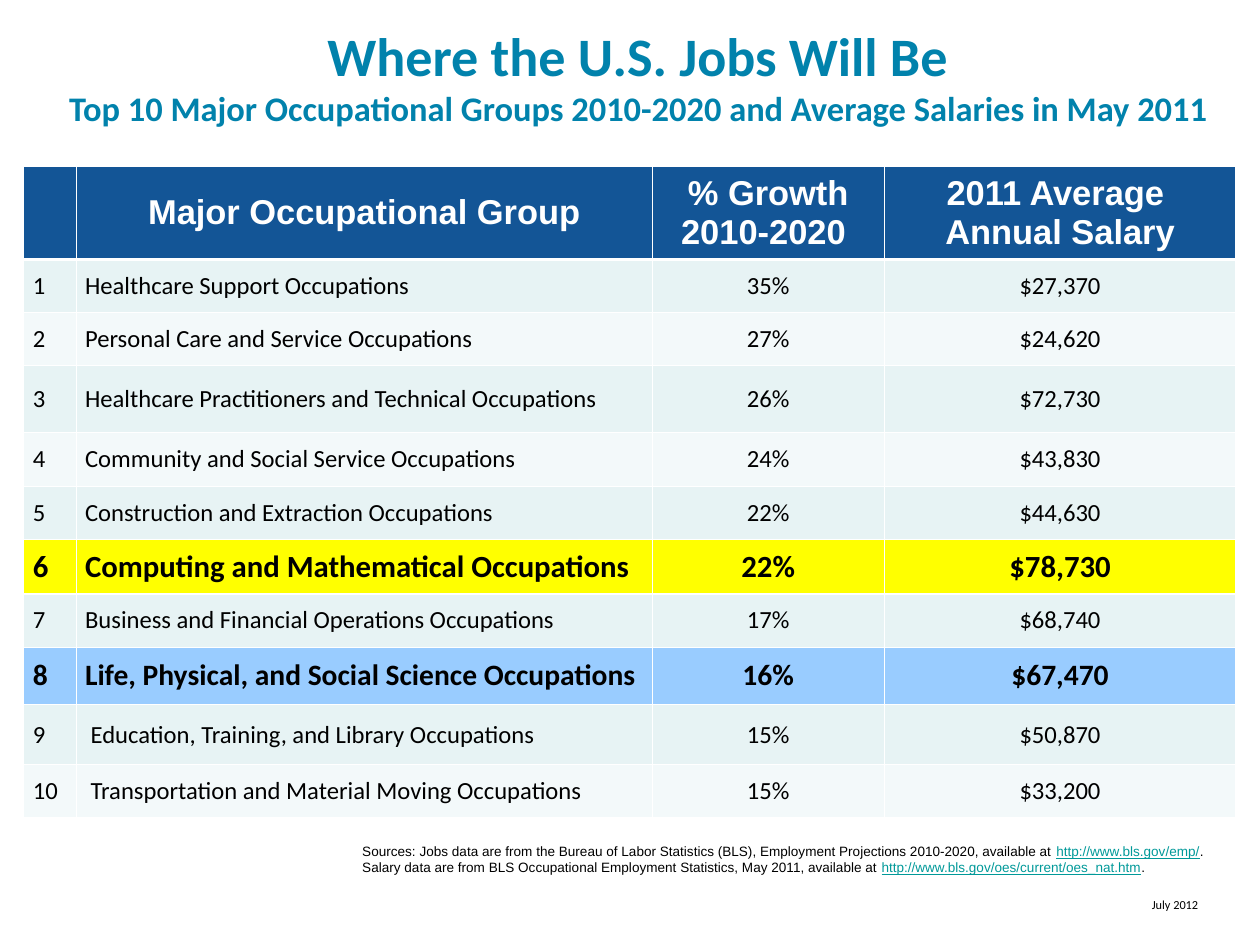
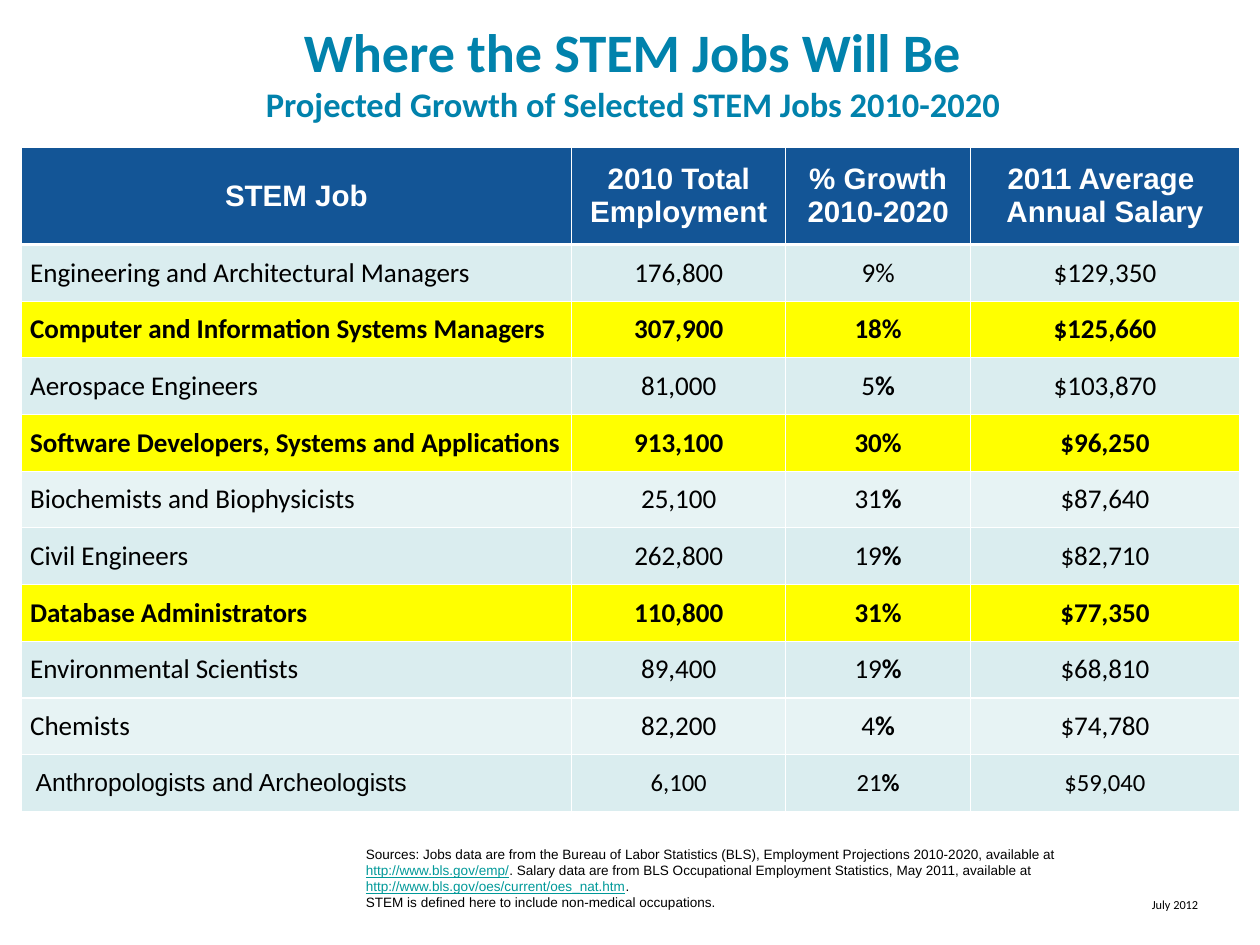
"""Build two slides of job growth and salary tables."""
from lxml import etree
from pptx import Presentation
from pptx import util as u
from pptx.dml.color import RGBColor
from pptx.enum import text
from pptx.oxml.ns import qn

COLORS = {
    "title": "0182AC", "header": "135596", "white": "FFFFFF", "black": "000000",
    "link": "009999", "pale": "F3F9FA", "light": "E7F3F4", "medium": "DAEDEF",
    "yellow": "FFFF00", "blue": "99CCFF",
}
CENTER, LEFT, RIGHT = text.PP_ALIGN.CENTER, text.PP_ALIGN.LEFT, text.PP_ALIGN.RIGHT
MIDDLE = text.MSO_ANCHOR.MIDDLE

TITLE = {"name": "Calibri", "size": u.Pt(44), "bold": True, "color": "title"}
SUBTITLE = {**TITLE, "size": u.Pt(28)}
DATE = {"name": "Calibri", "size": u.Pt(10), "color": "black"}
SOURCE = {"name": "Arial", "size": u.Pt(11), "color": "black"}
LINK = {**SOURCE, "color": "link", "underline": True}
HEADER = {"name": "Arial", "bold": True, "color": "white"}
BODY = {"name": "Calibri", "bold": False, "color": "black"}

SOURCES = [
    ("Sources: Jobs data are from the Bureau of Labor Statistics (BLS), "
     "Employment Projections 2010-2020, available at ", SOURCE),
    ("http://www.bls.gov/emp/", LINK),
    (". Salary data are from BLS Occupational Employment Statistics, "
     "May 2011, available at ", SOURCE),
    ("http://www.bls.gov/oes/current/oes_nat.htm", LINK),
    (".", SOURCE),
]
STEM_NOTE = [("STEM is defined here to include non-medical occupations.", SOURCE)]

PAGES = [
    {
        "title": "Where the U.S. Jobs Will Be",
        "subtitle": "Top 10 Major Occupational Groups 2010-2020 and Average Salaries in May 2011",
        "title_box": (3.09, 2.06, 95.5, 11.9),
        "sources": [SOURCES],
        "source_box": (28.06, 88.75, 68.28, 4.4),
        "source_inset": 0.05,
        "corner": (1.9, 17.62),
        "columns": [4.15, 45.71, 18.42, 27.92],
        "left_columns": 2,
        "header_size": 28,
        "header_height": 9.84,
        "header": ["", "Major Occupational Group", "% Growth\n2010-2020 ",
                   "2011 Average \nAnnual Salary"],
        "rows": [
            (5.62, "light", 20, ["1", "Healthcare Support Occupations", "35%", "$27,370"]),
            (5.62, "pale", 20, ["2", "Personal Care and Service Occupations", "27%", "$24,620"]),
            (7.12, "light", 20, ["3", "Healthcare Practitioners and Technical Occupations", "26%", "$72,730"]),
            (5.62, "pale", 20, ["4", "Community and Social Service Occupations", "24%", "$43,830"]),
            (5.62, "light", 20, ["5", "Construction and Extraction Occupations", "22%", "$44,630"]),
            (5.81, "yellow", 25, ["6", "Computing and Mathematical Occupations", "22%", "$78,730"]),
            (5.62, "light", 20, ["7", "Business and Financial Operations Occupations", "17%", "$68,740"]),
            (6.09, "blue", 24, ["8", "Life, Physical, and Social Science Occupations", "16%", "$67,470"]),
            (6.37, "light", 20, ["9", " Education, Training, and Library Occupations", "15%", "$50,870"]),
            (5.62, "pale", 20, ["10", " Transportation and Material Moving Occupations", "15%", "$33,200"]),
        ],
    },
    {
        "title": "Where the STEM Jobs Will Be",
        "subtitle": "Projected Growth of Selected STEM Jobs 2010-2020",
        "title_box": (5.84, 1.59, 89.17, 11.9),
        "sources": [SOURCES, STEM_NOTE],
        "source_box": (28.34, 89.03, 68, 6.19),
        "source_inset": 1.3,
        "corner": (1.69, 15.65),
        "columns": [43.67, 17.02, 14.63, 21.38],
        "left_columns": 1,
        "header_size": 24,
        "header_height": 10.22,
        "header": ["STEM Job", "2010 Total Employment", "% Growth\n2010-2020",
                   "2011 Average \nAnnual Salary"],
        "rows": [
            (6, "medium", 22, ["Engineering and Architectural Managers", "176,800", "9%", "$129,350"]),
            (6, "yellow", 22, ["Computer and Information Systems Managers", "307,900", "18%", "$125,660"]),
            (6, "medium", 22, ["Aerospace Engineers", "81,000", "5|%", "$103,870"]),
            (6, "yellow", 22, ["Software Developers, Systems and Applications", "913,100", "30%", "$96,250"]),
            (6, "light", 22, ["Biochemists and Biophysicists", "25,100", "31|%", "$87,640"]),
            (6, "medium", 22, ["Civil Engineers", "262,800", "19|%", "$82,710"]),
            (6, "yellow", 22, ["Database Administrators", "110,800", "31%", "$77,350"]),
            (6, "medium", 22, ["Environmental Scientists", "89,400", "19|%", "$68,810"]),
            (6, "light", 22, ["Chemists", "82,200", "4|%", "$74,780"]),
            (6, "medium", 20, [" Anthropologists and Archeologists", "6,100", "21|%", "$59,040"]),
        ],
    },
]

presentation = Presentation()
presentation.slide_width, presentation.slide_height = u.Inches(14.22), u.Inches(10.67)
X, Y = presentation.slide_width / 100, presentation.slide_height / 100


def write(frame, paragraphs, alignment):
    """Fill a text frame with paragraphs made of (words, format) runs."""
    for index, runs in enumerate(paragraphs):
        paragraph = frame.paragraphs[0] if index == 0 else frame.add_paragraph()
        paragraph.alignment = alignment
        for words, style in runs:
            if words == "\v":
                paragraph.add_line_break()
                continue
            run = paragraph.add_run()
            run.text = words
            for key, value in style.items():
                if key == "color":
                    run.font.color.rgb = RGBColor.from_string(COLORS[value])
                else:
                    setattr(run.font, key, value)


def add_text(slide, box, paragraphs, alignment, **settings):
    """Add a wrapped text box placed by percentages of the slide."""
    left, top, width, height = box
    shape = slide.shapes.add_textbox(int(left * X), int(top * Y), int(width * X), int(height * Y))
    for key, value in {"word_wrap": True, **settings}.items():
        setattr(shape.text_frame, key, value)
    write(shape.text_frame, paragraphs, alignment)


for page in PAGES:
    slide = presentation.slides.add_slide(presentation.slide_layouts[6])
    add_text(slide, (69.41, 94.47, 26.37, 2.53), [[("July 2012", DATE)]], RIGHT)
    add_text(slide, page["title_box"],
             [[(page["title"], TITLE), ("\v", {}), (page["subtitle"], SUBTITLE)]], CENTER,
             vertical_anchor=MIDDLE, margin_left=0, margin_top=0,
             margin_right=u.Inches(0.06), margin_bottom=0)
    add_text(slide, page["source_box"], page["sources"], LEFT,
             margin_right=u.Inches(page["source_inset"]))

    rows = [(page["header_height"], "header", page["header_size"], page["header"])] + page["rows"]
    left, top = page["corner"]
    table = slide.shapes.add_table(
        len(rows), len(page["columns"]), int(left * X), int(top * Y),
        int(sum(page["columns"]) * X), int(sum(row[0] for row in rows) * Y)).table
    for column, width in zip(table.columns, page["columns"]):
        column.width = int(width * X)

    for row_index, (height, fill, size, values) in enumerate(rows):
        table.rows[row_index].height = int(height * Y)
        base = HEADER if row_index == 0 else BODY
        style = {**base, "size": u.Pt(size)}
        if fill in ("yellow", "blue"):
            style["bold"] = True
        for column_index, value in enumerate(values):
            cell = table.cell(row_index, column_index)
            cell.vertical_anchor = MIDDLE
            cell.fill.solid()
            cell.fill.fore_color.rgb = RGBColor.from_string(COLORS[fill])
            cell_style = dict(style)
            if value.endswith("Archeologists"):
                cell_style["name"] = "Arial"
            paragraphs = []
            for line in value.split("\n"):
                plain, mark, strong = line.partition("|")
                runs = [(plain, cell_style)]
                if mark:
                    runs.append((strong, {**cell_style, "bold": True}))
                paragraphs.append(runs)
            is_left = row_index > 0 and column_index < page["left_columns"]
            write(cell.text_frame, paragraphs, LEFT if is_left else CENTER)

            properties = cell._tc.get_or_add_tcPr()
            for position, side in enumerate(("lnL", "lnR", "lnT", "lnB")):
                thick = (row_index, side) in ((0, "lnB"), (1, "lnT"))
                border = etree.Element(qn(f"a:{side}"), w=str(u.Pt(3 if thick else 1)))
                solid = etree.SubElement(border, qn("a:solidFill"))
                etree.SubElement(solid, qn("a:srgbClr"), val=COLORS["white"])
                properties.insert(position, border)

presentation.save("out.pptx")
